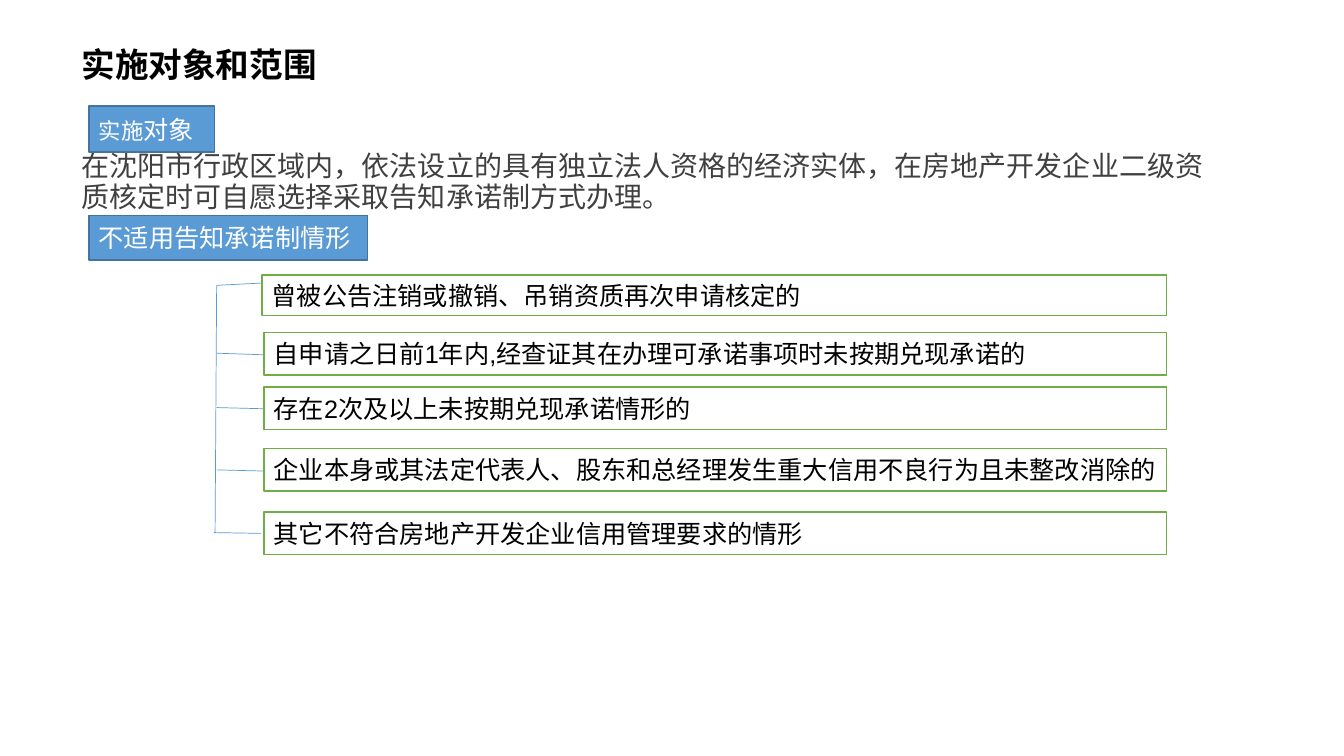
from dataclasses import dataclass

from lxml.etree import SubElement
from pptx import Presentation
from pptx.dml.color import RGBColor
from pptx.enum.shapes import MSO_CONNECTOR as Connector, MSO_SHAPE as Shape
from pptx.enum.text import MSO_ANCHOR as Anchor, MSO_AUTO_SIZE as AutoSize, PP_ALIGN as Align
from pptx.oxml.ns import qn
from pptx.util import Cm, Pt


@dataclass(frozen=True)
class Theme:
    black: RGBColor = RGBColor(0x00, 0x00, 0x00)
    white: RGBColor = RGBColor(0xFF, 0xFF, 0xFF)
    grey: RGBColor = RGBColor(0x40, 0x40, 0x40)
    blue: RGBColor = RGBColor(0x5B, 0x9B, 0xD5)
    dark_blue: RGBColor = RGBColor(0x43, 0x73, 0x9E)
    green: RGBColor = RGBColor(0x70, 0xAD, 0x47)
    heading_font: str = "Montserrat"
    text_font: str = "Arial"
    title_size: Pt = Pt(24)
    body_size: Pt = Pt(20)
    box_size: Pt = Pt(18)
    small_size: Pt = Pt(16)
    border: Pt = Pt(1)
    branch: Pt = Pt(0.5)


THEME = Theme()
EXCLUDED_CASES = [
    ("曾被公告注销或撤销、吊销资质再次申请核定的", 6.6, 6.93, 1.02),
    ("自申请之日前1年内,经查证其在办理可承诺事项时未按期兑现承诺的", 6.65, 8.38, 1.07),
    ("存在2次及以上未按期兑现承诺情形的", 6.65, 9.75, 1.07),
    ("企业本身或其法定代表人、股东和总经理发生重大信用不良行为且未整改消除的", 6.65, 11.3, 1.07),
    ("其它不符合房地产开发企业信用管理要求的情形", 6.65, 12.9, 1.07),
]
CASES_RIGHT = 29.4
BRANCHES = [
    ((5.46, 7.19), (6.65, 7.13)),
    ((5.46, 8.9), (6.65, 8.94)),
    ((5.46, 10.27), (6.65, 10.3)),
    ((5.46, 11.84), (6.65, 11.87)),
    ((5.39, 13.42), (6.58, 13.44)),
]


def format_run(run, size, color, font=THEME.text_font, bold=False):
    run.font.size = size
    run.font.name = font
    run.font.bold = bold
    run.font.color.rgb = color


def place(shape, left, top, width, height):
    shape.left, shape.top = Cm(left), Cm(top)
    shape.width, shape.height = Cm(width), Cm(height)


def fill_title(title, text):
    place(title, 1.8, 0.71, 29.21, 1.93)
    frame = title.text_frame
    frame.text = text
    frame.auto_size = AutoSize.NONE
    frame.vertical_anchor = Anchor.MIDDLE
    heading = frame.paragraphs[0]
    heading.alignment = Align.LEFT
    heading.line_spacing = 0.9
    format_run(heading.runs[0], THEME.title_size, THEME.black, THEME.heading_font, True)


def fill_body(body, text):
    place(body, 1.8, 2.64, 29.21, 14.5)
    frame = body.text_frame
    frame.text = text
    frame.auto_size = AutoSize.NONE
    frame.vertical_anchor = Anchor.TOP
    frame.margin_top = Cm(1.21)
    statement = frame.paragraphs[0]
    statement.alignment = Align.LEFT
    statement.line_spacing = 0.9
    statement.space_before = Pt(0)
    properties = statement._p.get_or_add_pPr()
    properties.set("marL", "0")
    properties.set("indent", "0")
    SubElement(properties, qn("a:buNone"))
    format_run(statement.runs[0], THEME.body_size, THEME.grey)


def add_box(slide, bounds, parts, fill, border, color):
    box = slide.shapes.add_shape(Shape.RECTANGLE, *map(Cm, bounds))
    box.shadow.inherit = False
    box.fill.solid()
    box.fill.fore_color.rgb = fill
    box.line.color.rgb = border
    box.line.width = THEME.border
    frame = box.text_frame
    frame.word_wrap = True
    frame.vertical_anchor = Anchor.MIDDLE
    label = frame.paragraphs[0]
    label.alignment = Align.LEFT
    for text, size in parts:
        run = label.add_run()
        run.text = text
        format_run(run, size, color)


def add_label(slide, bounds, parts):
    add_box(slide, bounds, parts, THEME.blue, THEME.dark_blue, THEME.white)


def add_case(slide, text, left, top, height):
    bounds = (left, top, CASES_RIGHT - left, height)
    add_box(slide, bounds, [(text, THEME.box_size)], THEME.white, THEME.green, THEME.black)


def add_branch(slide, start, end):
    branch = slide.shapes.add_connector(Connector.STRAIGHT, *map(Cm, start + end))
    branch.line.color.rgb = THEME.blue
    branch.line.width = THEME.branch
    SubElement(branch._element.spPr, qn("a:effectLst"))


def main():
    deck = Presentation()
    deck.slide_width, deck.slide_height = Cm(33.87), Cm(19.05)
    slide = deck.slides.add_slide(deck.slide_layouts[1])
    fill_title(slide.shapes.title, "实施对象和范围")
    fill_body(
        slide.placeholders[1],
        "在沈阳市行政区域内，依法设立的具有独立法人资格的经济实体，"
        "在房地产开发企业二级资质核定时可自愿选择采取告知承诺制方式办理。",
    )
    add_label(slide, (2.24, 2.67, 3.16, 1.16),
              [("实施", THEME.small_size), ("对象", THEME.box_size)])
    add_label(slide, (2.24, 5.43, 7.03, 1.12), [("不适用告知承诺制情形", THEME.box_size)])
    add_branch(slide, BRANCHES[0][0], (5.42, 13.44))
    for start, end in BRANCHES:
        add_branch(slide, start, end)
    for case in EXCLUDED_CASES:
        add_case(slide, *case)
    deck.save("out.pptx")


if __name__ == "__main__":
    main()
